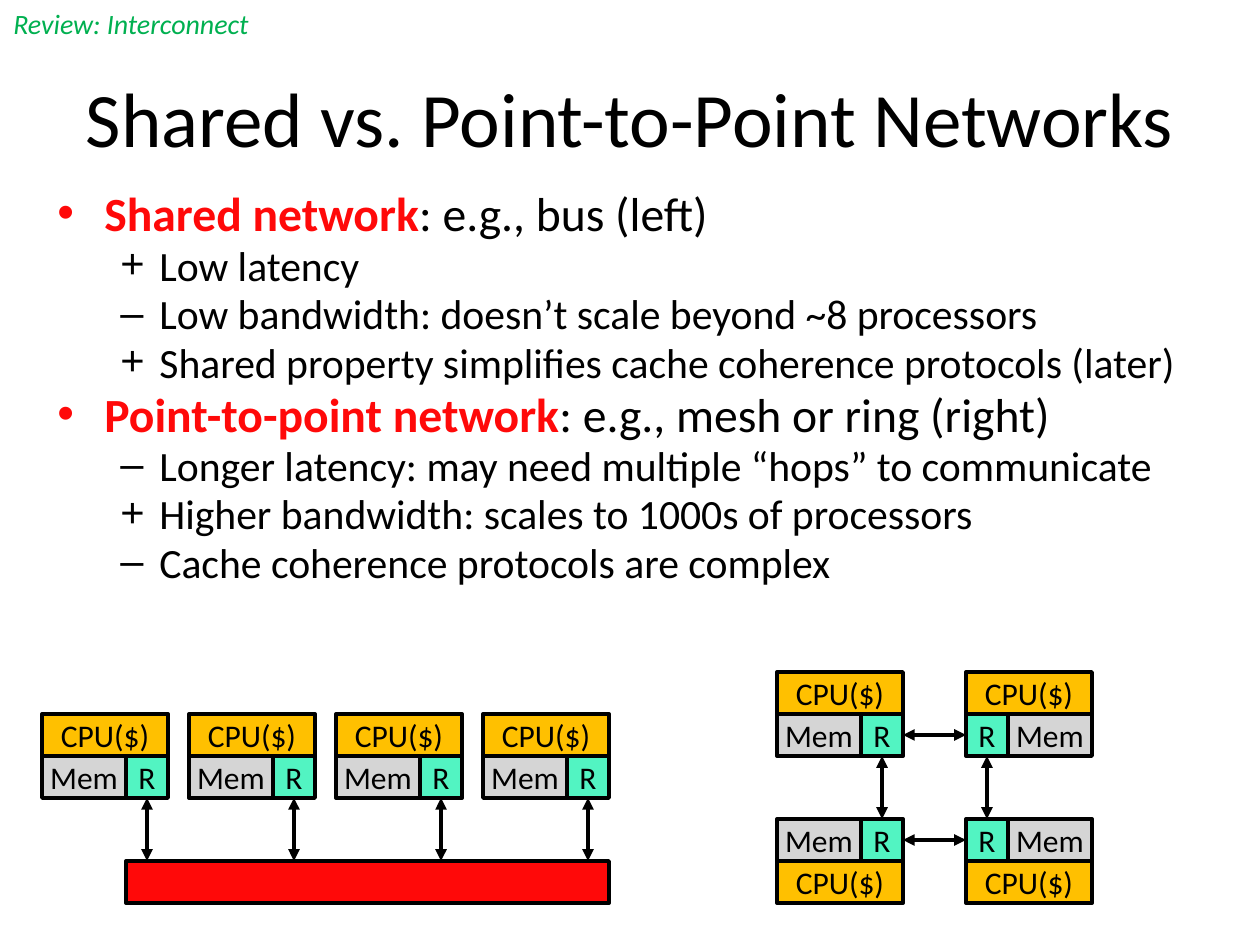
from lxml import etree
from pptx import Presentation
from pptx.dml.color import RGBColor
from pptx.enum.shapes import MSO_CONNECTOR, MSO_SHAPE
from pptx.enum.text import MSO_ANCHOR, MSO_AUTO_SIZE, PP_ALIGN
from pptx.oxml.ns import qn
from pptx.util import Emu, Pt

RECT = MSO_SHAPE.RECTANGLE
STRAIGHT = MSO_CONNECTOR.STRAIGHT
LEFT, CENTER = PP_ALIGN.LEFT, PP_ALIGN.CENTER
MIDDLE = MSO_ANCHOR.MIDDLE
TOP, WEST, BOTTOM, EAST = range(4)

FONT = "Calibri"
BLACK, RED, GREEN = "000000", "FF0909", "00B050"
AMBER, GRAY, MINT = "FFC000", "D5D5D5", "52F4C2"
UNIT = 42

POINTS = [
    ("•", "Shared network", ": e.g., bus (left)"),
    ("+", "", "Low latency"),
    ("–", "", "Low bandwidth: doesn’t scale beyond ~8 processors"),
    ("+", "", "Shared property simplifies cache coherence protocols (later)"),
    ("•", "Point-to-point network", ": e.g., mesh or ring (right)"),
    ("–", "", "Longer latency: may need multiple “hops” to communicate"),
    ("+", "", "Higher bandwidth: scales to 1000s of processors"),
    ("–", "", "Cache coherence protocols are complex"),
]


def px(n):
    return Emu(round(n * 914400 / 126))


def rgb(color):
    return RGBColor.from_string(color)


def write(p, text, size=18, color=BLACK, bold=False, italic=False, align=LEFT):
    p.alignment = align
    r = p.add_run()
    r.text = text
    r.font.name = FONT
    r.font.size = Pt(size)
    r.font.color.rgb = rgb(color)
    r.font.bold = bold
    r.font.italic = italic


def set_bullet(p, char, margin, hanging):
    pPr = p._p.get_or_add_pPr()
    pPr.set("marL", str(px(margin)))
    pPr.set("indent", str(-px(hanging)))
    etree.SubElement(pPr, qn("a:buFont"), typeface="Arial")
    etree.SubElement(pPr, qn("a:buChar"), char=char)


def add_title(s, x, y, w, h):
    sp = s.shapes.title
    sp.left, sp.top, sp.width, sp.height = map(px, (x, y, w, h))
    tf = sp.text_frame
    tf.vertical_anchor = MIDDLE
    write(tf.paragraphs[0], "Shared vs. Point-to-Point Networks", size=44, align=CENTER)


def add_tag(s, x, y, w, h):
    tf = s.shapes.add_textbox(*map(px, (x, y, w, h))).text_frame
    tf.word_wrap = False
    tf.auto_size = MSO_AUTO_SIZE.SHAPE_TO_FIT_TEXT
    write(tf.paragraphs[0], "Review: Interconnect", size=16, color=GREEN, italic=True)


def add_points(s, x, y, w, h):
    tf = s.shapes.add_textbox(*map(px, (x, y, w, h))).text_frame
    tf.word_wrap = True
    for i, (char, term, text) in enumerate(POINTS):
        p = tf.add_paragraph() if i else tf.paragraphs[0]
        size = 27.2 if term else 23.8
        p.line_spacing = 0.8
        p.space_before = Pt(round(size * 0.2, 1))
        if term:
            set_bullet(p, char, 47, 47)
            write(p, term, size=size, color=RED, bold=True)
        else:
            p.level = 1
            set_bullet(p, char, 102, 39)
        write(p, text, size=size)


def add_box(s, x, y, w, h, fill, text=""):
    sp = s.shapes.add_shape(RECT, *map(px, (x, y, w, h)))
    sp.shadow.inherit = False
    sp.fill.solid()
    sp.fill.fore_color.rgb = rgb(fill)
    sp.line.color.rgb = rgb(BLACK)
    sp.line.width = Pt(2.25)
    if text:
        tf = sp.text_frame
        tf.word_wrap = False
        tf.vertical_anchor = MIDDLE
        write(tf.paragraphs[0], text, align=CENTER)
    return sp


def add_arrow(s, x1, y1, x2, y2):
    cn = s.shapes.add_connector(STRAIGHT, *map(px, (x1, y1, x2, y2)))
    cn.line.color.rgb = rgb(BLACK)
    cn.line.width = Pt(2.25)
    ln = cn.line._get_or_add_ln()
    for end in ("a:headEnd", "a:tailEnd"):
        etree.SubElement(ln, qn(end), type="triangle")
    etree.SubElement(cn._element.spPr, qn("a:effectLst"))
    return cn


def link(s, a, a_side, b, b_side):
    cn = add_arrow(s, 0, 0, 0, 0)
    cn.begin_connect(a, a_side)
    cn.end_connect(b, b_side)


def add_node(s, x, y, mirrored=False, flipped=False):
    cpu_y, row_y = (y + UNIT, y) if flipped else (y, y + UNIT)
    mem_x, router_x = (x + UNIT, x) if mirrored else (x, x + 2 * UNIT)
    add_box(s, x, cpu_y, 3 * UNIT, UNIT, AMBER, "CPU($)")
    add_box(s, mem_x, row_y, 2 * UNIT, UNIT, GRAY, "Mem")
    return add_box(s, router_x, row_y, UNIT, UNIT, MINT, "R")


def add_bus(s, x, y, count=4, pitch=147):
    bus_y = y + 147
    for i in range(count):
        node_x = x + i * pitch
        router = add_node(s, node_x, y)
        port_x = node_x + 2.5 * UNIT
        cn = add_arrow(s, port_x, y + 2 * UNIT, port_x, bus_y)
        cn.begin_connect(router, BOTTOM)
    add_box(s, x + 2 * UNIT, bus_y, (count - 1) * pitch + UNIT, UNIT, RED)


def add_ring(s, x, y, dx=189, dy=147):
    (nw, ne), (sw, se) = [
        [add_node(s, x + c * dx, y + r * dy, mirrored=c == 1, flipped=r == 1)
         for c in range(2)]
        for r in range(2)
    ]
    for west, east in ((nw, ne), (sw, se)):
        link(s, west, EAST, east, WEST)
    for north, south in ((nw, sw), (ne, se)):
        link(s, north, BOTTOM, south, TOP)


def main():
    prs = Presentation()
    prs.slide_width, prs.slide_height = px(1260), px(945)
    s = prs.slides.add_slide(prs.slide_layouts[5])
    add_title(s, 63, 38, 1134, 158)
    add_points(s, 45, 189, 1176, 462)
    add_bus(s, 42, 714)
    add_ring(s, 777, 672)
    add_tag(s, 1, 0, 263, 47)
    prs.save("out.pptx")


if __name__ == "__main__":
    main()
